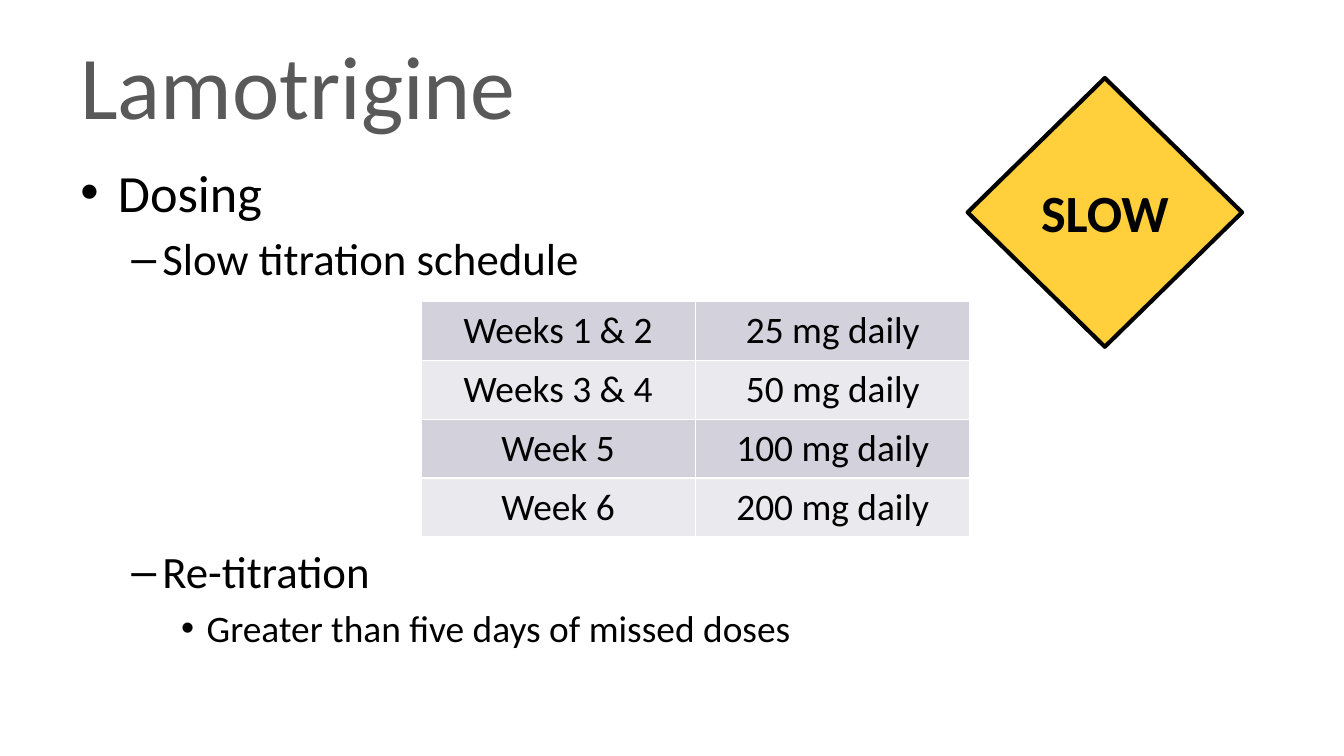
"""Build the Lamotrigine dosing slide."""
import dataclasses

import pptx
import pptx.dml.color
import pptx.enum.shapes
import pptx.enum.text
import pptx.oxml
import pptx.oxml.ns
import pptx.util

Pt = pptx.util.Pt
CENTER = pptx.enum.text.PP_ALIGN.CENTER
MIDDLE = pptx.enum.text.MSO_ANCHOR.MIDDLE


@dataclasses.dataclass(frozen=True)
class Theme:
    font: str = "Calibri"
    title: str = "595959"
    text: str = "000000"
    sign: str = "FFD03B"
    border: str = "FFFFFF"
    bands: tuple = ("D3D1DB", "EAE9EE")
    title_size: int = 48
    level_sizes: tuple = (28, 24, 20)
    table_size: int = 20
    sign_size: int = 28


THEME = Theme()
LEVELS = (("•", 20.16, -20.16), ("–", 43.92, -16.56), ("•", 67.68, -13.68))
OUTLINE = (
    (0, "Dosing", 0),
    (1, "Slow titration schedule", 4.4),
    (1, "Re-titration", 139),
    (2, "Greater than five days of missed doses", 4),
)
SCHEDULE = (
    ("Weeks 1 & 2", "25 mg daily"),
    ("Weeks 3 & 4", "50 mg daily"),
    ("Week 5", "100 mg daily"),
    ("Week 6", "200 mg daily"),
)


def color(value):
    return pptx.dml.color.RGBColor.from_string(value)


def style_runs(paragraph, size, value=THEME.text, bold=False):
    for run in paragraph.runs:
        run.font.name = THEME.font
        run.font.size = Pt(size)
        run.font.bold = bold
        run.font.color.rgb = color(value)


def add_text_box(shapes, left, top, width, height):
    text_frame = shapes.add_textbox(Pt(left), Pt(top), Pt(width), Pt(height)).text_frame
    text_frame.word_wrap = True
    return text_frame


def add_title(slide, text):
    text_frame = add_text_box(slide.shapes, 36, 24.5, 648, 51)
    text_frame.vertical_anchor = pptx.enum.text.MSO_ANCHOR.BOTTOM
    text_frame.text = text
    paragraph = text_frame.paragraphs[0]
    paragraph.line_spacing = 0.7
    style_runs(paragraph, THEME.title_size, THEME.title)


def set_bullet(paragraph, level):
    character, margin, indent = LEVELS[level]
    properties = paragraph._p.get_or_add_pPr()
    properties.set("marL", str(Pt(margin)))
    properties.set("indent", str(Pt(indent)))
    namespace = pptx.oxml.ns.nsdecls("a")
    for xml in (f'<a:buFont {namespace} typeface="Arial"/>',
                f'<a:buChar {namespace} char="{character}"/>'):
        properties.append(pptx.oxml.parse_xml(xml))


def add_outline(slide, items):
    text_frame = add_text_box(slide.shapes, 36, 82.1, 648, 264)
    for index, (level, text, space_before) in enumerate(items):
        paragraph = text_frame.add_paragraph() if index else text_frame.paragraphs[0]
        paragraph.text = text
        paragraph.level = level
        set_bullet(paragraph, level)
        if space_before:
            paragraph.space_before = Pt(space_before)
        style_runs(paragraph, THEME.level_sizes[level])


def set_borders(cell):
    properties = cell._tc.get_or_add_tcPr()
    for index, side in enumerate(("lnL", "lnR", "lnT", "lnB")):
        properties.insert(index, pptx.oxml.parse_xml(
            f'<a:{side} {pptx.oxml.ns.nsdecls("a")} w="{Pt(1)}"><a:solidFill>'
            f'<a:srgbClr val="{THEME.border}"/></a:solidFill></a:{side}>'))


def add_schedule(slide, rows):
    frame = slide.shapes.add_table(
        len(rows), len(rows[0]), Pt(225.4), Pt(161.5), Pt(294.4), Pt(126.4))
    for row_index, row in enumerate(rows):
        for column_index, text in enumerate(row):
            cell = frame.table.cell(row_index, column_index)
            cell.text = text
            cell.vertical_anchor = MIDDLE
            cell.fill.solid()
            cell.fill.fore_color.rgb = color(THEME.bands[row_index % 2])
            set_borders(cell)
            paragraph = cell.text_frame.paragraphs[0]
            paragraph.alignment = CENTER
            style_runs(paragraph, THEME.table_size)


def add_sign(slide, text):
    group = slide.shapes.add_group_shape()
    diamond = group.shapes.add_shape(
        pptx.enum.shapes.MSO_SHAPE.DIAMOND, Pt(518.4), Pt(41.8), Pt(147), Pt(144))
    diamond.shadow.inherit = False
    diamond.fill.solid()
    diamond.fill.fore_color.rgb = color(THEME.sign)
    diamond.line.color.rgb = color(THEME.text)
    diamond.line.width = Pt(2.25)
    text_frame = add_text_box(group.shapes, 545.8, 92.9, 92.2, 41)
    text_frame.text = text
    paragraph = text_frame.paragraphs[0]
    paragraph.alignment = CENTER
    style_runs(paragraph, THEME.sign_size, bold=True)


def main():
    presentation = pptx.Presentation()
    presentation.slide_width = Pt(720)
    presentation.slide_height = Pt(405)
    slide = presentation.slides.add_slide(presentation.slide_layouts[6])
    add_title(slide, "Lamotrigine")
    add_outline(slide, OUTLINE)
    add_schedule(slide, SCHEDULE)
    add_sign(slide, "SLOW")
    presentation.save("out.pptx")


if __name__ == "__main__":
    main()
